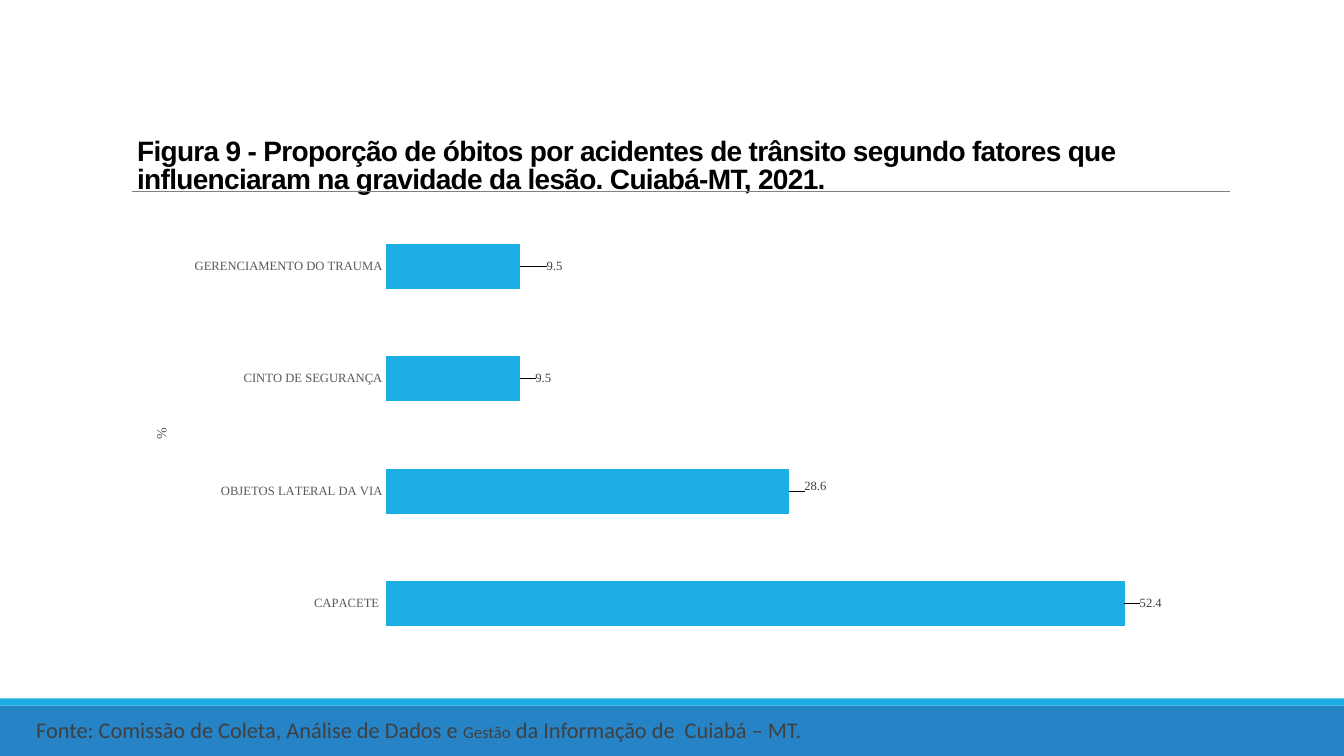
from dataclasses import dataclass

from lxml import etree
from pptx import Presentation
from pptx import util as u
from pptx.chart.data import CategoryChartData
from pptx.dml.color import RGBColor
from pptx.enum import chart as charts, shapes, text
from pptx.oxml import parse_xml
from pptx.oxml.ns import nsdecls, qn


@dataclass(frozen=True)
class Theme:
    width: float = 13.33
    height: float = 7.5
    band: str = "2683C6"
    accent: str = "1CADE4"
    rule: str = "808080"
    title: str = "000000"
    body: str = "404040"
    axis: str = "595959"
    title_font: str = "Arial"
    body_font: str = "Calibri"
    chart_font: str = "Times New Roman"
    title_size: int = 20
    source_size: int = 16
    small_size: int = 12
    axis_title_size: int = 10
    label_size: int = 9


THEME = Theme()
LEFT = 1.26
TITLE_BOTTOM = 1.99
BAND_TOP = 7
STRIPE = 0.07

FACTORS = [
    (" CAPACETE ", 52.4, (0.01, 0)),
    ("OBJETOS LATERAL DA VIA", 28.6, (0.01, -0.01)),
    ("CINTO DE SEGURANÇA", 9.5, (0.01, 0)),
    ("GERENCIAMENTO DO TRAUMA", 9.5, (0.02, 0)),
]


def color(value):
    return RGBColor.from_string(value)


def inches(*lengths):
    return [u.Inches(length) for length in lengths]


def style_font(font, name, size, fill, bold=False):
    font.name = name
    font.size = u.Pt(size)
    font.bold = bold
    font.color.rgb = color(fill)


def add_run(paragraph, words, *style):
    run = paragraph.add_run()
    run.text = words
    style_font(run.font, *style)
    return run


def add_band(slide, top, height, fill):
    band = slide.shapes.add_shape(
        shapes.MSO_SHAPE.RECTANGLE, *inches(0, top, THEME.width, height))
    band.shadow.inherit = False
    band.fill.solid()
    band.fill.fore_color.rgb = color(fill)
    band.line.fill.background()


def add_rule(slide, left, right, top):
    rule = slide.shapes.add_connector(
        shapes.MSO_CONNECTOR.STRAIGHT, *inches(left, top, right, top))
    rule.line.color.rgb = color(THEME.rule)
    rule.line.width = u.Pt(0.5)
    etree.SubElement(rule.element.spPr, qn("a:effectLst"))


def fill_title(slide, words):
    title = slide.shapes.title
    title.left, title.top, title.width, title.height = inches(
        LEFT, 0.4, 11, TITLE_BOTTOM - 0.4)
    frame = title.text_frame
    frame.word_wrap = True
    frame.auto_size = text.MSO_AUTO_SIZE.NONE
    frame.vertical_anchor = text.MSO_ANCHOR.BOTTOM
    paragraph = frame.paragraphs[0]
    paragraph.alignment = text.PP_ALIGN.LEFT
    paragraph.line_spacing = 0.85
    paragraph.space_before = u.Pt(0)
    run = add_run(paragraph, words, THEME.title_font, THEME.title_size,
                  THEME.title, True)
    run.font._element.set("spc", "-50")


def add_source(slide, runs):
    box = slide.shapes.add_textbox(*inches(0.26, 7.06, 12.57, 0.37))
    box.text_frame.word_wrap = True
    paragraph = box.text_frame.paragraphs[0]
    for words, size in runs:
        add_run(paragraph, words, THEME.body_font, size, THEME.body)


def manual_layout(modes="", **shares):
    values = "".join(f'<c:{key} val="{share}"/>' for key, share in shares.items())
    return parse_xml(f'<c:layout {nsdecls("c")}><c:manualLayout>{modes}{values}'
                     '</c:manualLayout></c:layout>')


def place(element, layout, after=None):
    for old in element.findall(qn("c:layout")):
        element.remove(old)
    if after is None:
        element.insert(0, layout)
    else:
        element.find(qn(after)).addnext(layout)


EDGE = '<c:xMode val="edge"/><c:yMode val="edge"/>'


def style_axes(chart):
    categories, values = chart.category_axis, chart.value_axis
    style_font(categories.tick_labels.font, THEME.chart_font,
               THEME.label_size, THEME.axis)
    categories.format.line.fill.background()
    categories.major_tick_mark = charts.XL_TICK_MARK.NONE
    categories.has_major_gridlines = False
    frame = categories.axis_title.text_frame
    add_run(frame.paragraphs[0], "%", THEME.chart_font,
            THEME.axis_title_size, THEME.axis)
    title = chart.element.xpath(".//c:catAx/c:title")[0]
    title.find(".//" + qn("a:bodyPr")).set("rot", "-5400000")
    place(title, manual_layout(EDGE, x=0.02, y=0.48), "c:tx")
    values.minimum_scale, values.maximum_scale = 0, 60
    values.has_major_gridlines = False
    values.visible = False


def style_bars(chart):
    plot = chart.plots[0]
    plot.gap_width = 150
    plot.vary_by_categories = False
    series = plot.series[0]
    series.format.fill.solid()
    series.format.fill.fore_color.rgb = color(THEME.accent)
    labels = series.data_labels
    labels.show_value = True
    labels.number_format = "0.0"
    labels.number_format_is_linked = False
    style_font(labels.font, THEME.chart_font, THEME.label_size, THEME.body)
    for index, (_, _, (right, down)) in enumerate(FACTORS):
        label = series.points[index].data_label
        style_font(label.font, THEME.chart_font, THEME.label_size, THEME.body)
        label.position = charts.XL_LABEL_POSITION.OUTSIDE_END
        element = chart.element.xpath(f".//c:dLbl[c:idx/@val={index}]")[0]
        place(element, manual_layout(x=right, y=down), "c:idx")


def add_factor_chart(slide):
    data = CategoryChartData(number_format="0.0")
    data.categories = [name for name, _, _ in FACTORS]
    data.add_series("Series 1", [value for _, value, _ in FACTORS])
    chart = slide.shapes.add_chart(
        charts.XL_CHART_TYPE.BAR_CLUSTERED,
        *inches(LEFT, TITLE_BOTTOM, 11.18, 4.65), data).chart
    chart.has_legend = False
    chart.has_title = False
    style_font(chart.font, THEME.body_font, THEME.axis_title_size, THEME.title)
    style_axes(chart)
    style_bars(chart)
    place(chart.element.xpath(".//c:plotArea")[0], manual_layout(
        '<c:layoutTarget val="inner"/>' + EDGE, x=0.23, y=0.02, w=0.75, h=0.96))


def main():
    presentation = Presentation()
    presentation.slide_width, presentation.slide_height = inches(
        THEME.width, THEME.height)
    slide = presentation.slides.add_slide(presentation.slide_layouts[5])
    add_band(slide, BAND_TOP, THEME.height - BAND_TOP, THEME.band)
    add_band(slide, BAND_TOP - STRIPE, STRIPE, THEME.accent)
    add_rule(slide, 1.31, 12.2, 1.9)
    fill_title(slide, "Figura 9 - Proporção de óbitos por acidentes de trânsito "
                      "segundo fatores que influenciaram na gravidade da lesão. "
                      "Cuiabá-MT, 2021.")
    add_source(slide, [
        ("Fonte: Comissão de Coleta, Análise de Dados e ", THEME.source_size),
        ("Gestão", THEME.small_size),
        (" da Informação de  Cuiabá – MT.", THEME.source_size),
    ])
    add_factor_chart(slide)
    presentation.save("out.pptx")


if __name__ == "__main__":
    main()
